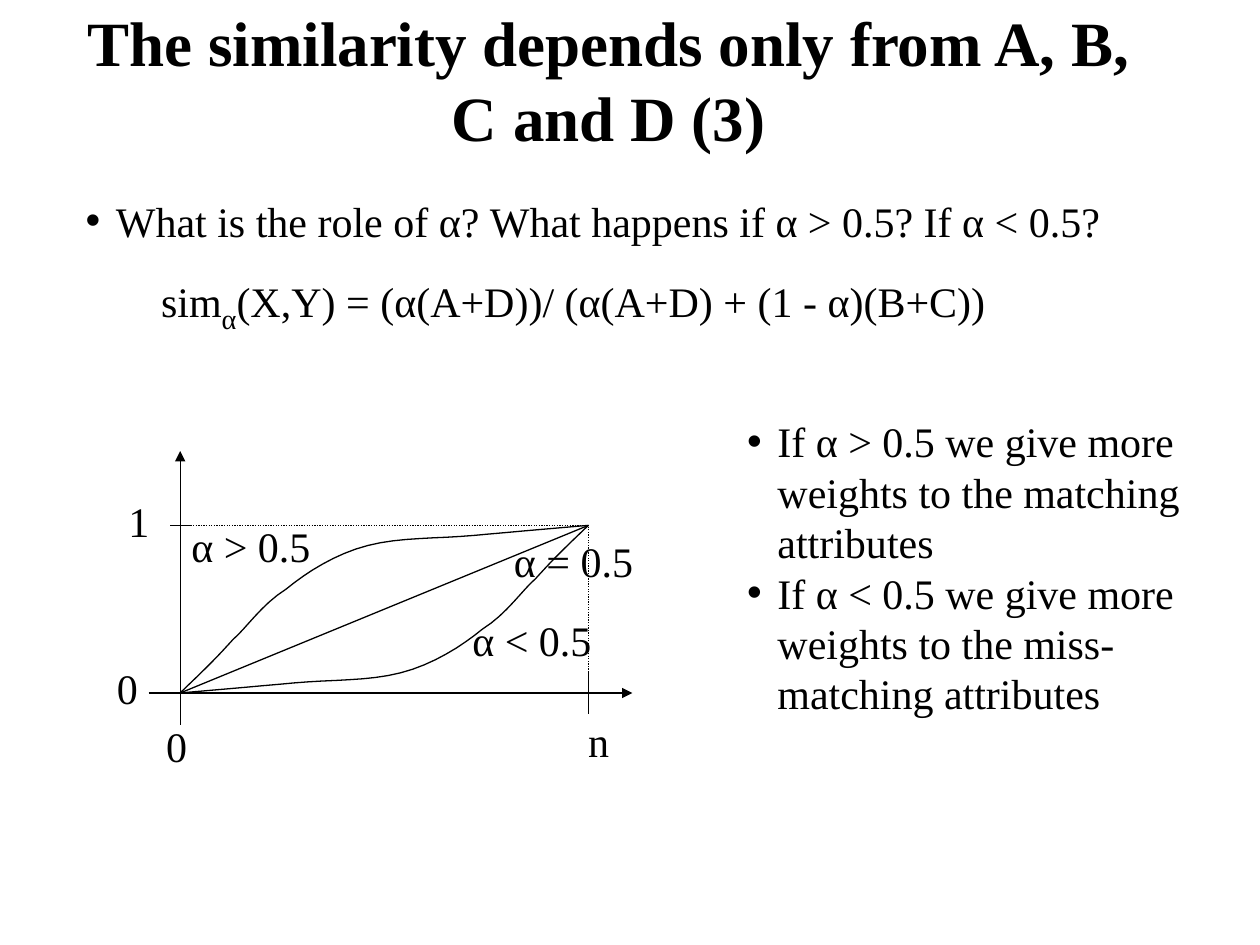
from pptx import Presentation
from pptx import util as u
from pptx.dml.color import RGBColor
from pptx.enum import dml, shapes, text
from pptx.oxml.ns import qn
from lxml import etree

W, H = 10, 7.5
FONT, INK = "Times New Roman", "000000"
# Curve for α > 0.5 as shares of the plot: start, then Bezier triples
CURVE = [(0, 0),
         (.03, .07), (.06, .14), (.08, .19), (.1, .24), (.1, .24), (.13, .32),
         (.16, .38), (.2, .53), (.26, .62), (.31, .72), (.38, .83), (.46, .88),
         (.54, .93), (.63, .92), (.72, .94), (.81, .96), (.95, .99), (1, 1)]


def rgb(value):
    return RGBColor.from_string(value)


def style(p, size=24, bold=False):
    p.font.name, p.font.size, p.font.bold = FONT, u.Pt(size), bold
    p.font.color.rgb = rgb(INK)


def place(sp, box):
    sp.left, sp.top, sp.width, sp.height = [u.Inches(v) for v in box]


def label(s, x, y, w, *parts):
    """One line of text; parts after the first alternate subscript, normal."""
    tf = s.shapes.add_textbox(*[u.Inches(v) for v in (x, y, w, .5)]).text_frame
    tf.word_wrap = False
    p = tf.paragraphs[0]
    style(p)
    for i, part in enumerate(parts):
        r = p.add_run()
        r.text = part
        if i % 2:
            r.font.size = u.Pt(28)
            r.font._element.set("baseline", "-25000")


def line(s, start, end, arrow=False, dotted=False):
    c = s.shapes.add_connector(shapes.MSO_CONNECTOR.STRAIGHT,
                               *[u.Inches(v) for v in (*start, *end)])
    c.line.width, c.line.color.rgb = u.Pt(.75), rgb(INK)
    if dotted:
        c.line.dash_style = dml.MSO_LINE.ROUND_DOT
    if arrow:
        etree.SubElement(c.line._get_or_add_ln(), qn("a:tailEnd"), type="triangle")
    etree.SubElement(c._element.spPr, qn("a:effectLst"))


def title(s, box, words):
    sp = s.shapes.title
    place(sp, box)
    tf = sp.text_frame
    tf.text = words
    tf.vertical_anchor = text.MSO_ANCHOR.MIDDLE
    p = tf.paragraphs[0]
    p.alignment = text.PP_ALIGN.CENTER
    style(p, 36, True)


def bullets(sp, box, items):
    place(sp, box)
    tf = sp.text_frame
    tf.text = "\n".join(items)
    for p in tf.paragraphs:
        style(p)
        p.space_before = u.Pt(0)
        pPr = p._p.get_or_add_pPr()
        pPr.set("marL", str(u.Inches(.24)))
        pPr.set("indent", str(u.Inches(-.24)))


def bezier(nodes, steps=8):
    """Points along a chain of cubic Bezier segments."""
    points = [nodes[0]]
    for i in range(0, len(nodes) - 1, 3):
        for k in range(1, steps + 1):
            t = k / steps
            weights = ((1 - t) ** 3, 3 * t * (1 - t) ** 2, 3 * t * t * (1 - t), t ** 3)
            points.append(tuple(sum(m * n[a] for m, n in zip(weights, nodes[i:i + 4]))
                                for a in (0, 1)))
    return points


def plot(s, box):
    x, y, w, h = box
    right, base = x + w, y + h

    # Axes and ticks
    line(s, (x, base + .25), (x, y - .59), arrow=True)
    line(s, (x - .25, base), (right + .35, base), arrow=True)
    line(s, (x - .08, y), (x + .09, y))
    line(s, (right, base - .17), (right, base + .17))
    for words, dx, dy in (("1", -.51, -.29), ("0", -.6, h - .29),
                          ("0", -.21, h + .17), ("n", w - .1, h + .13)):
        label(s, x + dx, y + dy, .37, words)

    # Guides and the straight case
    line(s, (x, y), (right, y), dotted=True)
    line(s, (right, base), (right, y), dotted=True)
    line(s, (x, base), (right, y))

    # The lower curve is the upper one turned by half a circle
    upper = bezier(CURVE)
    for points in (upper, [(1 - a, 1 - b) for a, b in upper]):
        xy = [(u.Inches(x + a * w), u.Inches(base - b * h)) for a, b in points]
        fb = s.shapes.build_freeform(*xy[0])
        fb.add_line_segments(xy[1:], close=False)
        sp = fb.convert_to_shape()
        sp.shadow.inherit = False
        sp.fill.background()
        sp.line.width, sp.line.color.rgb = u.Pt(.75), rgb(INK)

    for words, dx, dy in (("α > 0.5", -.01, -.09), ("α = 0.5", w - .69, .03),
                          ("α < 0.5", w - 1.02, .66)):
        label(s, x + dx, y + dy, 1.18, words)


def main():
    prs = Presentation()
    prs.slide_width, prs.slide_height = u.Inches(W), u.Inches(H)
    s = prs.slides.add_slide(prs.slide_layouts[3])
    question, answer = s.placeholders[1], s.placeholders[2]

    title(s, (.58, 0, 8.5, 1.25), "The similarity depends only from A, B, C and D (3)")
    bullets(question, (.58, 1.5, 9.18, .5),
            ["What is the role of α? What happens if α > 0.5? If α < 0.5?"])
    label(s, 1.18, 2.08, 6.9, "sim", "α", "(X,Y) = (α(A+D))/ (α(A+D) + (1 - α)(B+C))")
    plot(s, (1.43, 4.17, 3.24, 1.33))
    bullets(answer, (5.83, 3.25, 4.1, 2.52),
            ["If α > 0.5 we give more weights to the matching attributes",
             "If α < 0.5 we give more weights to the miss-matching attributes"])
    prs.save("out.pptx")


if __name__ == "__main__":
    main()
